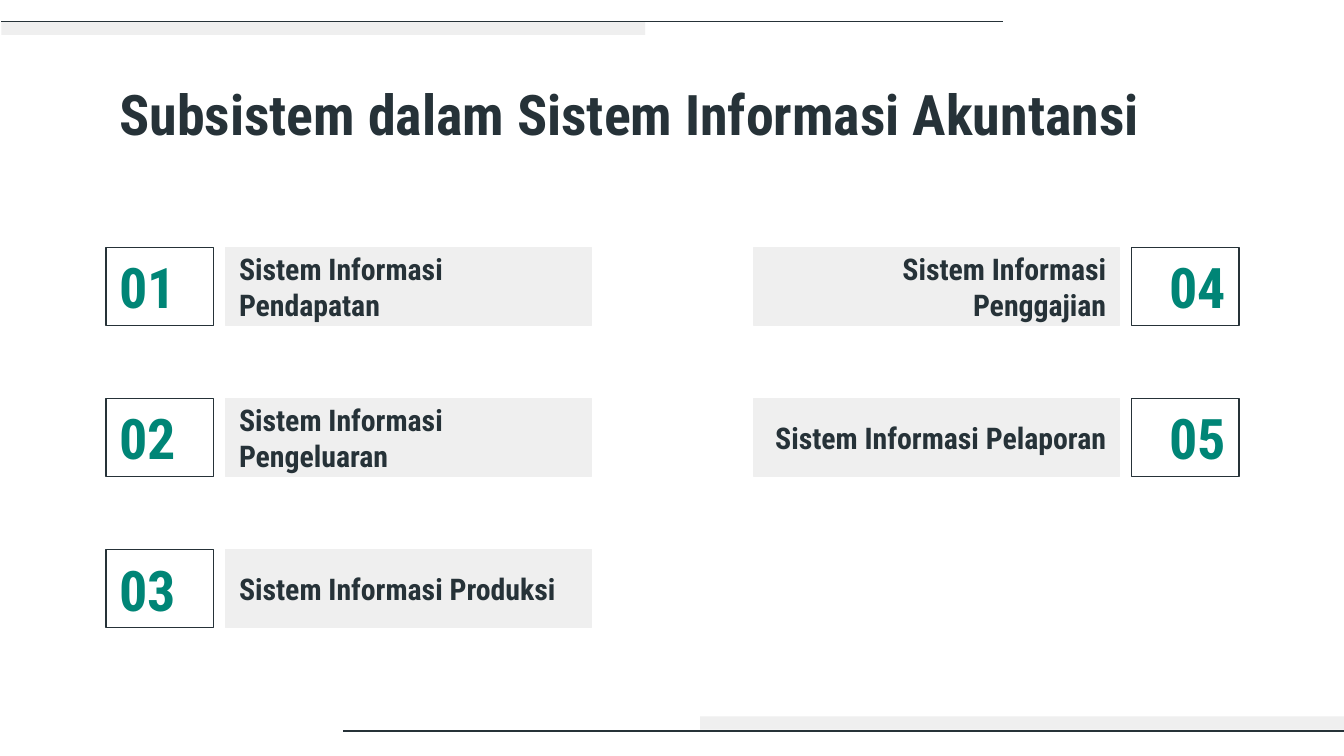
from lxml import etree
from pptx import Presentation, util as u
from pptx.dml.color import RGBColor
from pptx.enum import shapes, text
from pptx.oxml.ns import qn

INK = RGBColor(0x26, 0x32, 0x38)
TEAL = RGBColor(0x00, 0x85, 0x76)
GREY = RGBColor(0xEF, 0xEF, 0xEF)
FACE = "Roboto Condensed"

TITLE = "Subsistem dalam Sistem Informasi Akuntansi"
LEFT, RIGHT = text.PP_ALIGN.LEFT, text.PP_ALIGN.RIGHT
TOP, MID = text.MSO_ANCHOR.TOP, text.MSO_ANCHOR.MIDDLE
SIDES = [
    (LEFT, ["Sistem Informasi Pendapatan", "Sistem Informasi Pengeluaran",
            "Sistem Informasi Produksi"]),
    (RIGHT, ["Sistem Informasi Penggajian", "Sistem Informasi Pelaporan"]),
]

WIDE = 10
HIGH = WIDE * 9 / 16
EDGE = 0.79
SPAN = 8.43
NUM, BAR, GAP = 0.8, 2.72, 0.09
ROW, STEP, TALL = 1.84, HIGH / 5, 0.58
BANDS = [(5.21, 5.33), (0.01, 0.16)]
RULES = [(0.01, 7.46, 0.16), (WIDE, 2.55, 5.44)]

deck = Presentation()
deck.slide_width, deck.slide_height = u.Inches(WIDE), u.Inches(HIGH)
slide = deck.slides.add_slide(deck.slide_layouts[6])


def box(x, y, w, h, fill=None, line=None):
    item = slide.shapes.add_shape(
        shapes.MSO_SHAPE.RECTANGLE, *map(u.Inches, (x, y, w, h)))
    item.shadow.inherit = False
    for part, tone in ((item.fill, fill), (item.line.fill, line)):
        if tone is None:
            part.background()
        else:
            part.solid()
            part.fore_color.rgb = tone
    if line is not None:
        item.line.width = u.Pt(0.75)
    return item


def write(item, words, size, tone, side=LEFT, anchor=MID):
    frame = item.text_frame
    pad = u.Inches(0.1)
    form = {"word_wrap": True, "vertical_anchor": anchor, "margin_left": pad,
            "margin_right": pad, "margin_top": pad, "margin_bottom": pad}
    for key, val in form.items():
        setattr(frame, key, val)
    para = frame.paragraphs[0]
    para.alignment = side
    run = para.add_run()
    run.text = words
    for key, val in {"name": FACE, "size": u.Pt(size), "bold": True}.items():
        setattr(run.font, key, val)
    run.font.color.rgb = tone


for x, y in BANDS:
    box(x, y, 4.79, 0.1, GREY)
for start, end, y in RULES:
    rule = slide.shapes.add_connector(
        shapes.MSO_CONNECTOR.STRAIGHT, *map(u.Inches, (start, y, end, y)))
    rule.line.color.rgb = INK
    rule.line.width = u.Pt(0.75)
    etree.SubElement(rule._element.spPr, qn("a:effectLst"))

head = slide.shapes.add_textbox(*map(u.Inches, (EDGE, 0.49, SPAN, 0.63)))
write(head, TITLE, 30, INK, anchor=TOP)

count = 0
for side, names in SIDES:
    if side == LEFT:
        num = EDGE
        bar = num + NUM + GAP
    else:
        num = EDGE + SPAN - NUM
        bar = num - GAP - BAR
    for row, name in enumerate(names):
        count += 1
        y = ROW + row * STEP
        write(box(num, y, NUM, TALL, line=INK), f"{count:02}", 30, TEAL, side)
        write(box(bar, y, BAR, TALL, GREY, GREY), name, 16, INK, side)

deck.save("out.pptx")
